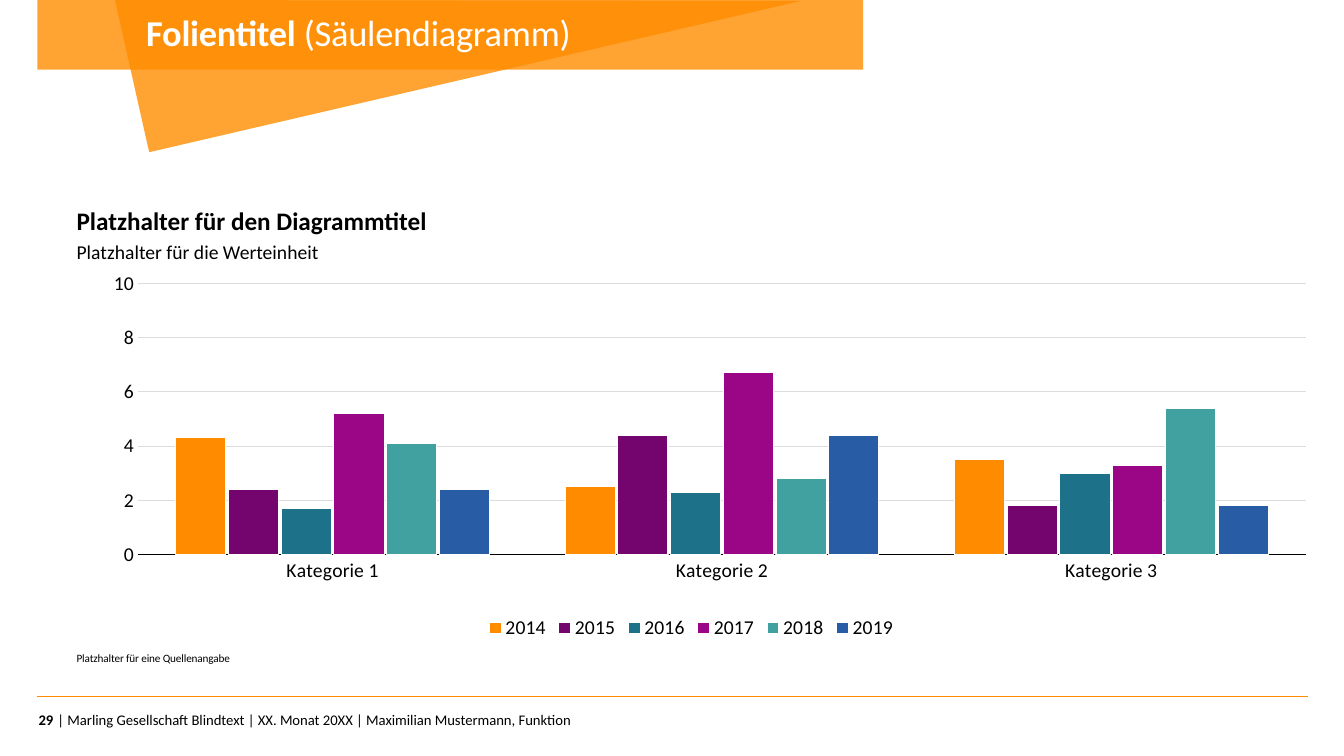
from pptx import Presentation
from pptx.chart import data
from pptx.dml import color
from pptx.enum import chart as ce, shapes, text
from pptx.oxml import ns, xmlchemy as xml
from pptx.util import Inches, Pt

FONT = "Calibri"
HUES = {"brand": "FF8C00", "ink": "000000", "paper": "FFFFFF", "grid": "DCDCDC"}
YEARS = {
    "2014": ("FF8C00", (4.3, 2.5, 3.5)),
    "2015": ("74056F", (2.4, 4.4, 1.8)),
    "2016": ("1D728A", (1.7, 2.3, 3)),
    "2017": ("9B0687", (5.2, 6.7, 3.3)),
    "2018": ("41A0A0", (4.1, 2.8, 5.4)),
    "2019": ("285DA6", (2.4, 4.4, 1.8)),
}
PLOT = {"x": 0.05, "y": 0.03, "w": 0.95, "h": 0.73}


def rgb(hue):
    """Turn a hex string into a colour."""
    return color.RGBColor.from_string(hue)


def place(shape, box):
    """Move a shape to a box given in inches."""
    shape.left, shape.top, shape.width, shape.height = map(Inches, box)


def write(shape, runs, size, hue="ink", anchor="TOP", align="LEFT", lines=None, track=0):
    """Fill a shape with one paragraph of (words, bold) runs."""
    frame = shape.text_frame
    frame.margin_left = frame.margin_right = frame.margin_top = frame.margin_bottom = 0
    frame.word_wrap = True
    frame.auto_size = text.MSO_AUTO_SIZE.NONE
    frame.vertical_anchor = text.MSO_ANCHOR[anchor]
    para = frame.paragraphs[0]
    if shape.is_placeholder:
        props = para._p.get_or_add_pPr()
        props.set("marL", "0")
        props.set("indent", "0")
        props.append(xml.OxmlElement("a:buNone"))
    para.alignment = text.PP_ALIGN[align]
    para.space_before = Pt(0)
    if lines:
        para.line_spacing = lines
    for words, bold in runs:
        run = para.add_run()
        run.text = words
        font = run.font
        font.name, font.size, font.bold = FONT, Pt(size), bold
        font.color.rgb = rgb(HUES[hue])
        if track:
            run._r.get_or_add_rPr().set("spc", str(track))


def glaze(shape):
    """Paint a shape in see-through brand colour without outline."""
    shape.shadow.inherit = False
    shape.fill.solid()
    shape.fill.fore_color.rgb = rgb(HUES["brand"])
    shape.line.fill.background()
    tint = shape._element.spPr.find(".//" + ns.qn("a:srgbClr"))
    alpha = xml.OxmlElement("a:alpha")
    alpha.set("val", "80000")
    tint.append(alpha)


def header(slide, box):
    """Draw the band and wedge, then set the title on them."""
    x, y, w, h = box
    band = slide.shapes.add_shape(shapes.MSO_SHAPE.RECTANGLE, *map(Inches, box))
    glaze(band)
    left = x + 0.77
    build = slide.shapes.build_freeform(Inches(left), Inches(y))
    ends = [(left + 0.34, y + 1.51), (left + 6.8, y + 0.01)]
    build.add_line_segments([(Inches(a), Inches(b)) for a, b in ends], close=True)
    glaze(build.convert_to_shape())
    title = slide.shapes.title
    slide.shapes._spTree.append(title._element)
    place(title, (x + 1.08, y + 0.13, w - 1.26, 0.42))
    runs = [("Folientitel ", True), ("(Säulendiagramm)", False)]
    write(title, runs, 26, "paper", "MIDDLE", lines=0.95, track=-20)


def labels(slide, box):
    """Set the chart heading, unit and source in body placeholders."""
    x, y, w, h = box
    holds = {p.placeholder_format.idx: p for p in slide.placeholders}
    rows = [
        (1, "Platzhalter für den Diagrammtitel", y, 0.31, 18, True, "TOP", 0),
        (3, "Platzhalter für die Werteinheit", y + 0.35, 0.24, 14, False, "TOP", 0),
        (2, "Platzhalter für eine Quellenangabe", y + h - 0.14, 0.14, 8, False, "BOTTOM", -10),
    ]
    for idx, words, top, tall, size, bold, anchor, track in rows:
        place(holds[idx], (x, top, w, tall))
        write(holds[idx], [(words, bold)], size, anchor=anchor, lines=1.05, track=track)
    spare = holds[4]._element
    spare.getparent().remove(spare)


def columns(slide, box):
    """Add the clustered column chart."""
    table = data.CategoryChartData(number_format="General")
    table.categories = [f"Kategorie {n}" for n in (1, 2, 3)]
    for year, (hue, vals) in YEARS.items():
        table.add_series(year, vals)
    kind = ce.XL_CHART_TYPE.COLUMN_CLUSTERED
    chart = slide.shapes.add_chart(kind, *map(Inches, box), table).chart
    chart.has_title = False
    chart.font.name, chart.font.size = FONT, Pt(14)
    chart.font.color.rgb = rgb(HUES["ink"])
    chart.has_legend = True
    chart.legend.position = ce.XL_LEGEND_POSITION.BOTTOM
    chart.legend.include_in_layout = False

    plot = chart.plots[0]
    plot.gap_width, plot.overlap, plot.vary_by_categories = 150, -5, False
    for item, (hue, vals) in zip(plot.series, YEARS.values()):
        item.format.fill.solid()
        item.format.fill.fore_color.rgb = rgb(hue)
        item.format.line.color.rgb = rgb(HUES["paper"])
        item.format.line.width = Pt(0.75)

    cat, val = chart.category_axis, chart.value_axis
    for axis in (cat, val):
        axis.major_tick_mark = axis.minor_tick_mark = ce.XL_TICK_MARK.NONE
    cat.format.line.color.rgb = rgb(HUES["ink"])
    cat.format.line.width = Pt(1)
    val.format.line.fill.background()
    val.minimum_scale, val.maximum_scale, val.major_unit = 0, 10, 2
    val.tick_labels.number_format = "0"
    val.tick_labels.number_format_is_linked = False
    val.major_gridlines.format.line.color.rgb = rgb(HUES["grid"])
    val.major_gridlines.format.line.width = Pt(0.5)
    inset(chart)


def inset(chart):
    """Fix the inner plot area as fractions of the chart."""
    area = chart._chartSpace.find(".//" + ns.qn("c:plotArea"))
    for old in area.findall(ns.qn("c:layout")):
        area.remove(old)
    layout = xml.OxmlElement("c:layout")
    manual = xml.OxmlElement("c:manualLayout")
    layout.append(manual)
    marks = [("layoutTarget", "inner"), ("xMode", "edge"), ("yMode", "edge")]
    for tag, mark in marks + list(PLOT.items()):
        node = xml.OxmlElement("c:" + tag)
        node.set("val", str(mark))
        manual.append(node)
    area.insert(0, layout)


def footer(slide, box):
    """Draw the rule, page number and footer line."""
    x, y, w, h = box
    ends = map(Inches, (x, y, x + w, y))
    rule = slide.shapes.add_connector(shapes.MSO_CONNECTOR.STRAIGHT, *ends)
    rule.line.color.rgb = rgb(HUES["brand"])
    rule.line.width = Pt(1)
    rule._element.spPr.append(xml.OxmlElement("a:effectLst"))
    note = "| Marling Gesellschaft Blindtext | XX. Monat 20XX | Maximilian Mustermann, Funktion"
    parts = [(0.2, 7.09, note, False, "LEFT"), (-0.15, 0.31, "29", True, "RIGHT")]
    for shift, wide, words, bold, align in parts:
        spot = map(Inches, (x + shift, y + 0.14, wide, h - 0.14))
        label = slide.shapes.add_textbox(*spot)
        write(label, [(words, bold)], 10.5, anchor="MIDDLE", align=align)


def main():
    """Build and save the slide."""
    deck = Presentation()
    deck.slide_width, deck.slide_height = Inches(13.33), Inches(7.5)
    slide = deck.slides.add_slide(deck.slide_layouts[4])
    header(slide, (0.37, 0, 8.19, 0.69))
    labels(slide, (0.76, 2.02, 12.2, 4.57))
    columns(slide, (0.76, 2.69, 12.2, 3.7))
    footer(slide, (0.37, 6.91, 12.6, 0.32))
    deck.save("out.pptx")


if __name__ == "__main__":
    main()
